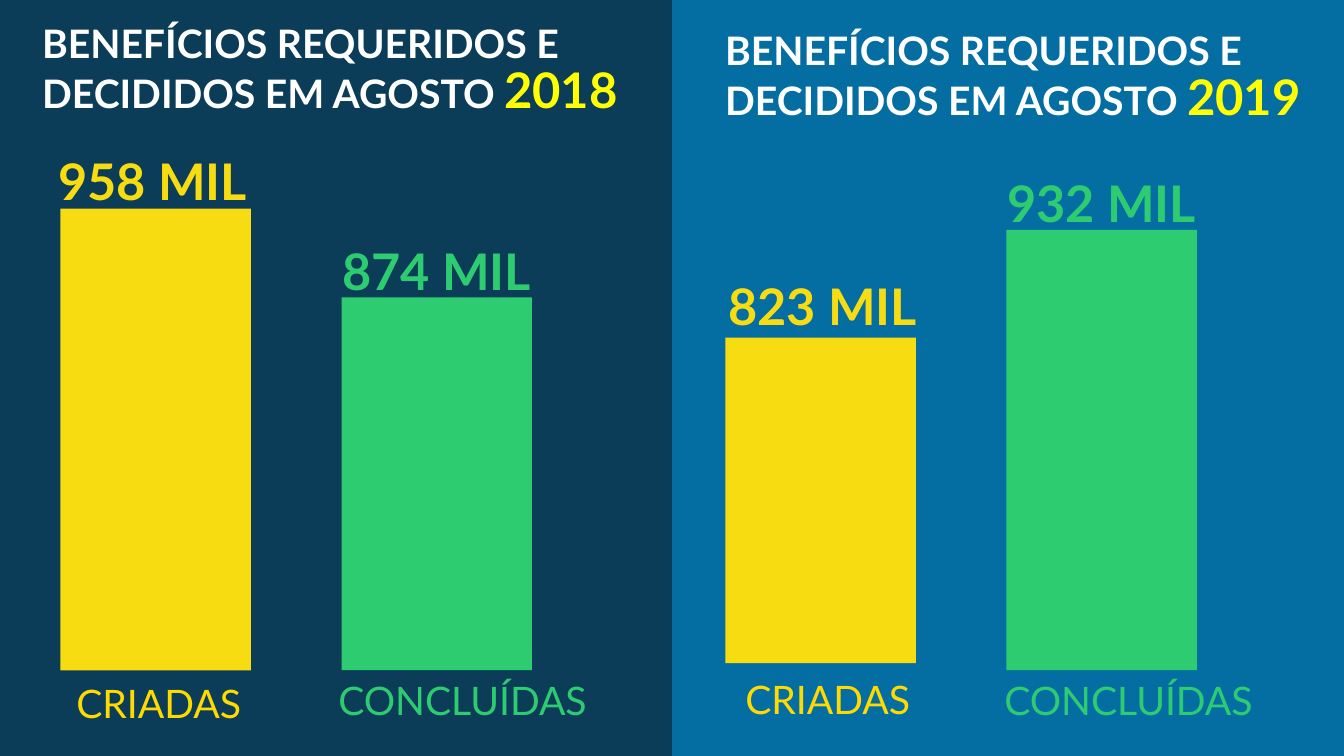
from pptx import Presentation
from pptx.dml.color import RGBColor
from pptx.enum.shapes import MSO_SHAPE
from pptx.enum.text import MSO_ANCHOR, PP_ALIGN
from pptx.util import Inches, Pt

RECTANGLE = MSO_SHAPE.RECTANGLE
TOP = MSO_ANCHOR.TOP
LEFT = PP_ALIGN.LEFT
CENTER = PP_ALIGN.CENTER

NAVY = "0B3D58"
BLUE = "046EA3"
WHITE = "FFFFFF"
BRIGHT_YELLOW = "FFFF00"
YELLOW = "F8DC12"
LABEL_YELLOW = "FFDA01"
GREEN = "2ECC71"

BAR_WIDTH = 1.89
BASELINE = 6.65


def color(hex_string):
    return RGBColor.from_string(hex_string)


class SlideBuilder:
    font = "Lato"

    def __init__(self, slide):
        self.slide = slide

    def rectangle(self, left, top, width, height, fill):
        shape = self.slide.shapes.add_shape(
            RECTANGLE, Inches(left), Inches(top), Inches(width), Inches(height))
        shape.shadow.inherit = False
        shape.fill.solid()
        shape.fill.fore_color.rgb = color(fill)
        shape.line.fill.background()

    def text(self, left, top, width, height, runs, bold=True, align=LEFT, spacing=1.0):
        shape = self.slide.shapes.add_textbox(
            Inches(left), Inches(top), Inches(width), Inches(height))
        frame = shape.text_frame
        frame.word_wrap = True
        frame.vertical_anchor = TOP
        paragraph = frame.paragraphs[0]
        paragraph.alignment = align
        paragraph.line_spacing = spacing
        for content, size, run_color in runs:
            run = paragraph.add_run()
            run.text = content
            run.font.name = self.font
            run.font.size = Pt(size)
            run.font.bold = bold
            run.font.color.rgb = color(run_color)

    def title(self, left, top, year):
        runs = [("BENEFÍCIOS REQUERIDOS E DECIDIDOS EM AGOSTO ", 28, WHITE),
                (year, 35, BRIGHT_YELLOW)]
        self.text(left, top, 6.3, 1.25, runs, spacing=0.9)

    def bar(self, left, height, fill, bottom=BASELINE):
        self.rectangle(left, bottom - height, BAR_WIDTH, height, fill)

    def value(self, left, top, content, text_color):
        self.text(left, top, 3.39, 2.15, [(content, 36, text_color)], align=CENTER)

    def category(self, left, top, width, content, text_color):
        self.text(left, top, width, 0.57, [(content, 28, text_color)], bold=False)


def main():
    presentation = Presentation()
    presentation.slide_width = Inches(13.34)
    presentation.slide_height = Inches(7.5)
    builder = SlideBuilder(presentation.slides.add_slide(presentation.slide_layouts[6]))

    builder.rectangle(0, 0, 13.34, 7.5, BLUE)
    builder.rectangle(0, 0, 6.67, 7.5, NAVY)

    builder.title(0.32, 0.19, "2018")
    builder.title(7.1, 0.26, "2019")

    builder.bar(0.6, 4.58, YELLOW)
    builder.bar(3.39, 3.7, GREEN)
    builder.bar(7.2, 3.23, YELLOW, bottom=6.58)
    builder.bar(9.99, 4.37, GREEN)

    builder.value(-0.18, 1.44, "958 MIL", YELLOW)
    builder.value(2.64, 2.33, "874 MIL", GREEN)
    builder.value(6.47, 2.68, "823 MIL", YELLOW)
    builder.value(9.24, 1.66, "932 MIL", GREEN)

    builder.category(0.66, 6.69, 2.46, "CRIADAS", LABEL_YELLOW)
    builder.category(3.26, 6.66, 2.97, "CONCLUÍDAS", GREEN)
    builder.category(7.3, 6.65, 2.46, "CRIADAS", LABEL_YELLOW)
    builder.category(9.87, 6.66, 2.97, "CONCLUÍDAS", GREEN)

    presentation.save("out.pptx")


if __name__ == "__main__":
    main()
